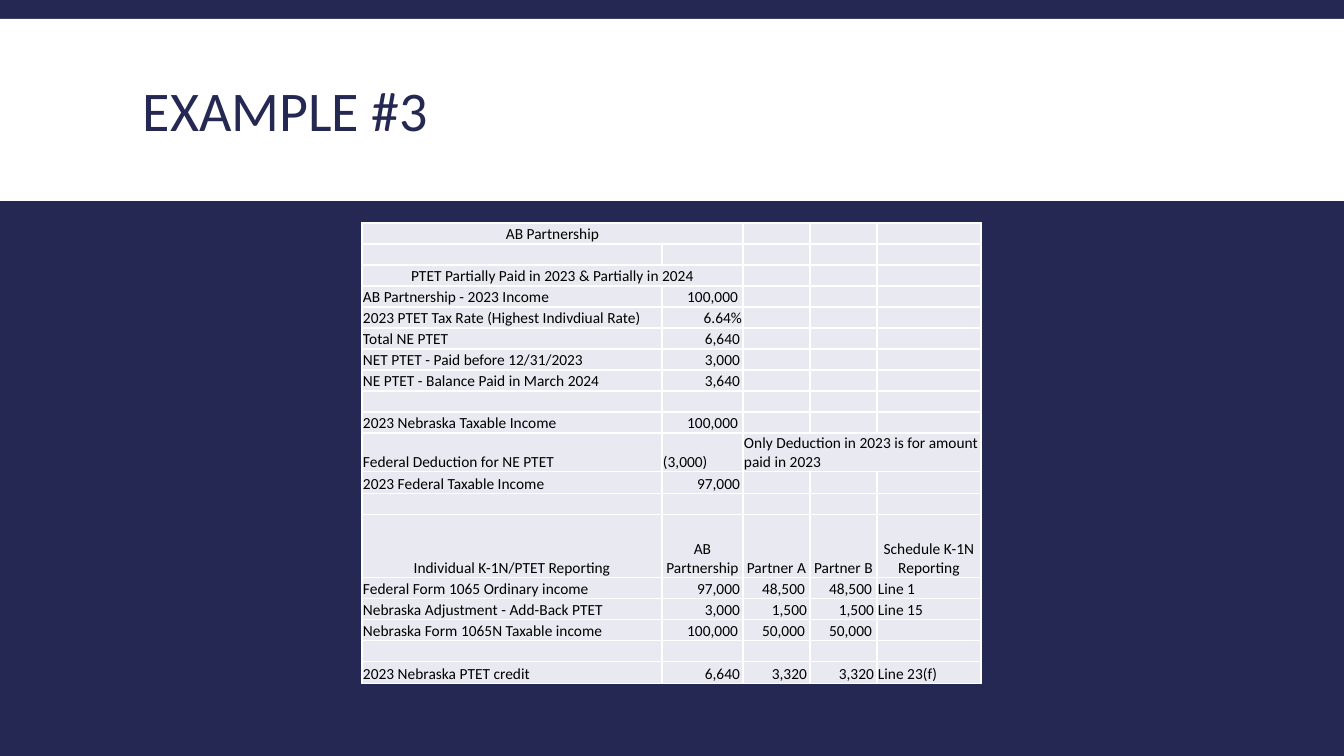
from lxml.etree import SubElement
from pptx import Presentation
from pptx.dml.color import RGBColor
from pptx.enum.shapes import MSO_SHAPE
from pptx.enum.text import MSO_ANCHOR, PP_ALIGN
from pptx.oxml import parse_xml
from pptx.oxml.ns import nsdecls, qn
from pptx.util import Emu, Pt

COLORS = {"navy": "242852", "white": "FFFFFF", "cell": "E9EAF1", "text": "000000"}
FONT = "Calibri"
ALIGN = {"l": PP_ALIGN.LEFT, "c": PP_ALIGN.CENTER, "r": PP_ALIGN.RIGHT}
COL_WIDTHS = [300, 81, 67, 67, 104]
ROW_HEIGHT = 21
TALL_ROWS = {10: 39, 11: 22, 13: 63, 18: 22}
HEADER_ROW = 13
MERGES = [(0, 0, 1), (2, 0, 1), (10, 2, 4)]  # row, first column, last column
WIDE_NUMBERS = {"100,000", "50,000", "48,500"}
ROWS = [
    ["AB Partnership"],
    [],
    ["PTET Partially Paid in 2023 & Partially in 2024"],
    ["AB Partnership - 2023 Income", "100,000"],
    ["2023 PTET Tax Rate (Highest Indivdiual Rate)", "6.64%"],
    ["Total NE PTET", "6,640"],
    ["NET PTET - Paid before 12/31/2023", "3,000"],
    ["NE PTET - Balance Paid in March 2024", "3,640"],
    [],
    ["2023 Nebraska Taxable Income", "100,000"],
    ["Federal Deduction for NE PTET", "(3,000)",
     "Only Deduction in 2023 is for amount paid in 2023"],
    ["2023 Federal Taxable Income", "97,000"],
    [],
    ["Individual K-1N/PTET Reporting", "AB Partnership", "Partner A", "Partner B",
     "Schedule K-1N Reporting"],
    ["Federal Form 1065 Ordinary income", "97,000", "48,500", "48,500", "Line 1"],
    ["Nebraska Adjustment - Add-Back PTET", "3,000", "1,500", "1,500", "Line 15"],
    ["Nebraska Form 1065N Taxable income", "100,000", "50,000", "50,000"],
    [],
    ["2023 Nebraska PTET credit", "6,640", "3,320", "3,320", "Line 23(f)"],
]


def px(n):
    return Emu(round(n * 914400 / 100.8))


def rgb(name):
    return RGBColor.from_string(COLORS[name])


def set_attrs(obj, values):
    for name, value in values.items():
        setattr(obj, name, value)


def add_run(p, text, size, color):
    r = p.add_run()
    r.text = text
    set_attrs(r.font, {"name": FONT, "size": Pt(size)})
    r.font.color.rgb = rgb(color)


def add_band(s, x, y, w, h):
    sp = s.shapes.add_shape(MSO_SHAPE.RECTANGLE, px(x), px(y), px(w), px(h))
    sp.shadow.inherit = False
    sp.fill.solid()
    sp.fill.fore_color.rgb = rgb("white")
    sp.line.fill.background()


def add_title(s, text, x, y, w, h):
    tf = s.shapes.add_textbox(px(x), px(y), px(w), px(h)).text_frame
    set_attrs(tf, {"word_wrap": True, "vertical_anchor": MSO_ANCHOR.MIDDLE})
    p = tf.paragraphs[0]
    p.line_spacing = 0.85
    add_run(p, text, 40, "navy")


def add_borders(cell):
    """Draw the four sides; the schema wants them ahead of the fill."""
    tc_pr = cell._tc.get_or_add_tcPr()
    for i, side in enumerate(("lnL", "lnR", "lnT", "lnB")):
        tc_pr.insert(i, parse_xml(
            f'<a:{side} {nsdecls("a")} w="12700"><a:solidFill>'
            f'<a:srgbClr val="{COLORS["white"]}"/></a:solidFill></a:{side}>'))


def cell_align(row, col, text):
    if row == HEADER_ROW or (row, col) in {(0, 0), (2, 0)}:
        return "c"
    return "r" if col in (1, 2, 3) and text[:1].isdigit() else "l"


def fill_cell(cell, text, align):
    right = 1
    if align == "r" and not text.endswith("%"):
        right = 5 if text in WIDE_NUMBERS else 3
    set_attrs(cell, {
        "margin_left": px(1), "margin_right": px(right), "margin_top": px(1),
        "margin_bottom": 0, "vertical_anchor": MSO_ANCHOR.BOTTOM})
    cell.fill.solid()
    cell.fill.fore_color.rgb = rgb("cell")
    add_borders(cell)
    p = cell.text_frame.paragraphs[0]
    p.alignment = ALIGN[align]
    if text:
        add_run(p, text, 11, "text")
    else:
        SubElement(p._p, qn("a:endParaRPr"), sz="1100")


def add_tax_table(s, x, y):
    heights = [TALL_ROWS.get(i, ROW_HEIGHT) for i in range(len(ROWS))]
    table = s.shapes.add_table(len(ROWS), len(COL_WIDTHS), px(x), px(y),
                               px(sum(COL_WIDTHS)), px(sum(heights))).table
    set_attrs(table, {"first_row": False, "horz_banding": False})
    for col, width in zip(table.columns, COL_WIDTHS):
        col.width = px(width)
    for row, height in zip(table.rows, heights):
        row.height = px(height)
    for i, texts in enumerate(ROWS):
        for j in range(len(COL_WIDTHS)):
            text = texts[j] if j < len(texts) else ""
            fill_cell(table.cell(i, j), text, cell_align(i, j, text))
    for row, first, last in MERGES:
        table.cell(row, first).merge(table.cell(row, last))


def main():
    prs = Presentation()
    set_attrs(prs, {"slide_width": px(1344), "slide_height": px(756)})
    s = prs.slides.add_slide(prs.slide_layouts[6])
    s.background.fill.solid()
    s.background.fill.fore_color.rgb = rgb("navy")
    add_band(s, 0, 19, 1344, 182)
    add_title(s, "EXAMPLE #3", 133, 31, 1079, 166)
    add_tax_table(s, 362, 223)
    prs.save("out.pptx")


if __name__ == "__main__":
    main()
